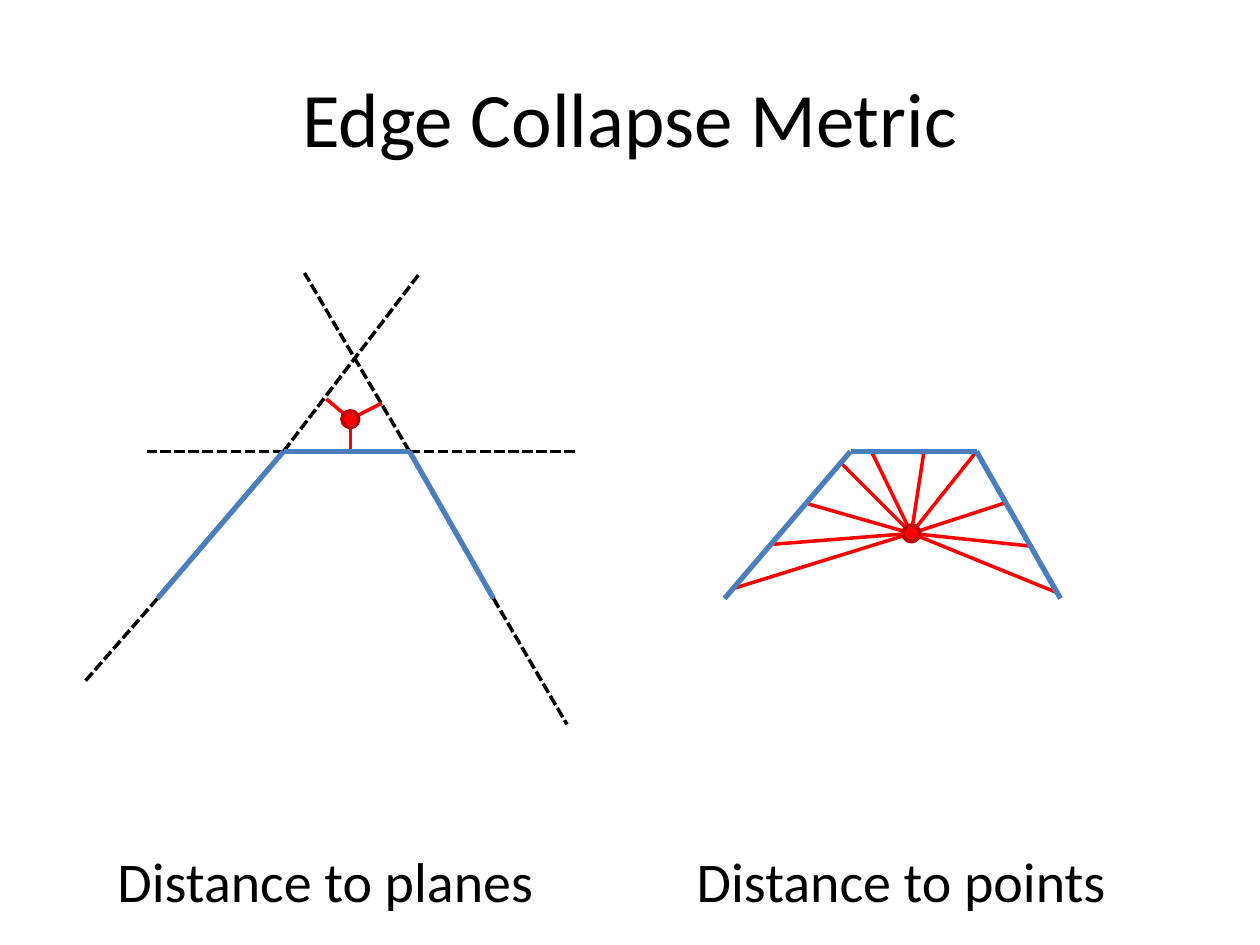
from lxml import etree
from pptx import Presentation
from pptx.dml.color import RGBColor
from pptx.enum.dml import MSO_LINE
from pptx.enum.shapes import MSO_CONNECTOR, MSO_SHAPE
from pptx.enum.text import MSO_ANCHOR, MSO_AUTO_SIZE, PP_ALIGN
from pptx.oxml.ns import qn
from pptx.util import Pt

STRAIGHT = MSO_CONNECTOR.STRAIGHT
OVAL = MSO_SHAPE.OVAL
DASH = MSO_LINE.SQUARE_DOT
MIDDLE, TOP = MSO_ANCHOR.MIDDLE, MSO_ANCHOR.TOP
CENTER, LEFT = PP_ALIGN.CENTER, PP_ALIGN.LEFT
NO_FIT, FIT_SHAPE = MSO_AUTO_SIZE.NONE, MSO_AUTO_SIZE.SHAPE_TO_FIT_TEXT
BLACK, RED, DARK_RED, BLUE = "000000", "FF0000", "C00000", "4B7EBC"


def color(value):
    return RGBColor.from_string(value)


def add_line(start, end, line_color, width=2, dash=None):
    connector = slide.shapes.add_connector(
        STRAIGHT, *(Pt(value) for value in start + end))
    connector.line.color.rgb = color(line_color)
    connector.line.width = Pt(width)
    if dash:
        connector.line.dash_style = dash
    etree.SubElement(connector._element.spPr, qn("a:effectLst"))


presentation = Presentation()
presentation.slide_width = Pt(720)
presentation.slide_height = Pt(540)
slide = presentation.slides.add_slide(presentation.slide_layouts[6])

texts = [
    ("Edge Collapse Metric", (36, 21.6, 648, 90), 44, CENTER, MIDDLE, True, NO_FIT),
    ("Distance to planes", (60, 480, 254.9, 46), 32, LEFT, TOP, False, FIT_SHAPE),
    ("Distance to points", (391, 480, 250.6, 46), 32, LEFT, TOP, False, FIT_SHAPE),
]
for text, box, size, alignment, anchor, wrap, fit in texts:
    text_box = slide.shapes.add_textbox(*(Pt(value) for value in box))
    frame = text_box.text_frame
    frame.word_wrap = wrap
    frame.auto_size = fit
    frame.vertical_anchor = anchor
    paragraph = frame.paragraphs[0]
    paragraph.alignment = alignment
    run = paragraph.add_run()
    run.text = text
    run.font.name = "Calibri"
    run.font.size = Pt(size)
    run.font.color.rgb = color(BLACK)

outline = [(90, 342), (162, 258), (234, 258), (282, 342)]
lower_left, upper_left, upper_right, lower_right = outline

plane_extensions = [
    (lower_right, (324, 414)),
    (upper_right, (330, 258)),
    (upper_left, (84, 258)),
    (lower_left, (48, 390)),
    (upper_left, (240, 156)),
    (upper_right, (174, 156)),
]
for start, end in plane_extensions:
    add_line(start, end, BLACK, dash=DASH)

plane_vertex = (200.2, 239.5)
plane_feet = [(186.5, 228), (218.2, 230.4), (200.2, 257)]
point_vertex = (520.8, 304.8)
point_samples = [
    (420, 336), (442, 311), (462, 288), (480, 264), (498, 258),
    (528, 258), (558, 258), (574.6, 287.3), (588, 312), (603.4, 338.4),
]
for vertex, targets in [(plane_vertex, plane_feet), (point_vertex, point_samples)]:
    for target in targets:
        add_line(vertex, target, RED)

diameter = 9.6
for x, y in [plane_vertex, point_vertex]:
    dot = slide.shapes.add_shape(
        OVAL, Pt(x - diameter / 2), Pt(y - diameter / 2), Pt(diameter), Pt(diameter))
    dot.shadow.inherit = False
    dot.fill.solid()
    dot.fill.fore_color.rgb = color(RED)
    dot.line.color.rgb = color(DARK_RED)
    dot.line.width = Pt(2)

for offset in (0, 324):
    for (x1, y1), (x2, y2) in zip(outline, outline[1:]):
        add_line((x1 + offset, y1), (x2 + offset, y2), BLUE, width=3)

presentation.save("out.pptx")
